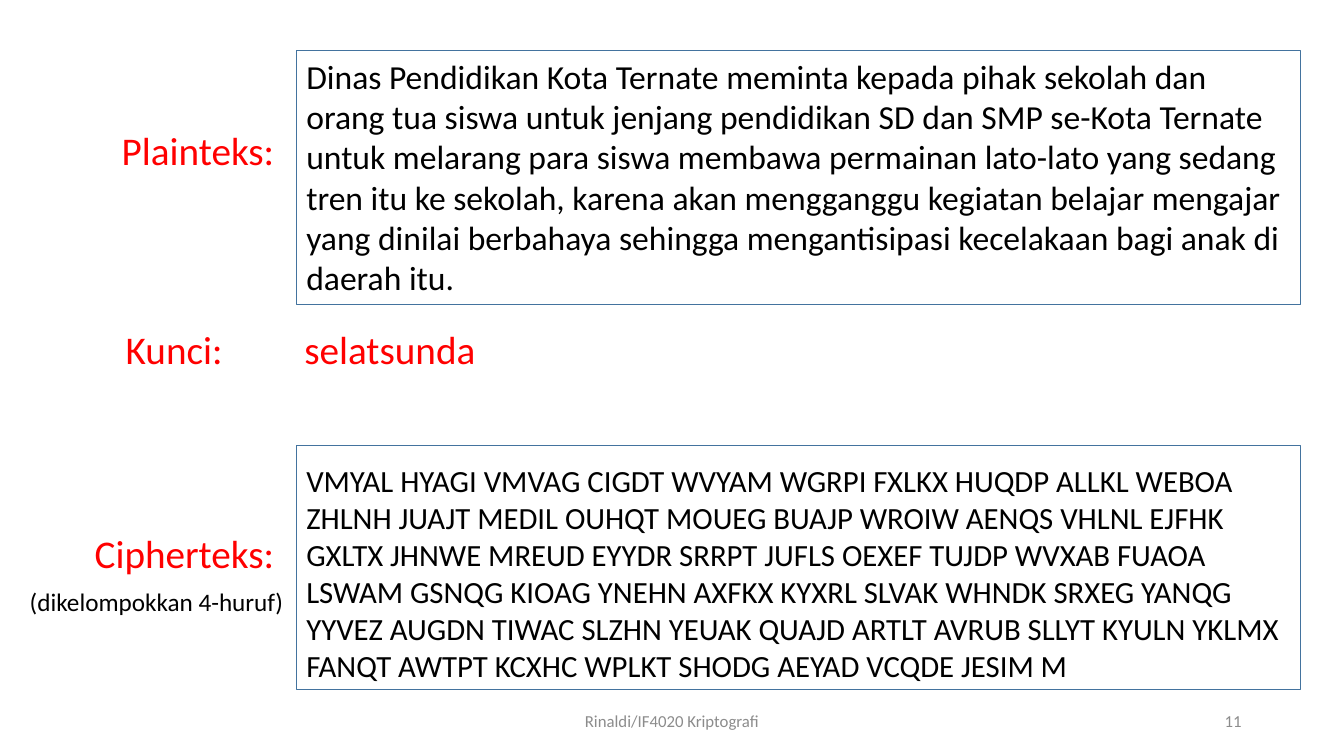
from pptx import Presentation
from pptx.dml.color import RGBColor
from pptx.enum.shapes import MSO_SHAPE
from pptx.enum.text import MSO_ANCHOR, PP_ALIGN
from pptx.util import Cm, Pt

RECTANGLE = MSO_SHAPE.RECTANGLE
TOP, MIDDLE = MSO_ANCHOR.TOP, MSO_ANCHOR.MIDDLE
LEFT, CENTER, RIGHT = PP_ALIGN.LEFT, PP_ALIGN.CENTER, PP_ALIGN.RIGHT

BLACK = RGBColor(0x00, 0x00, 0x00)
RED = RGBColor(0xFF, 0x00, 0x00)
GRAY = RGBColor(0x8C, 0x8C, 0x8C)
BLUE = RGBColor(0x43, 0x73, 0x9E)
FONT = "Calibri"

SLIDE_WIDTH, SLIDE_HEIGHT = Cm(33.87), Cm(19.05)
PANEL_LEFT, PANEL_WIDTH = Cm(7.47), Cm(25.3)
LABEL_RIGHT = Cm(7.16)
LABEL_WIDTH, LABEL_HEIGHT = Cm(6), Cm(1.45)

PLAINTEXT = (
    "Dinas Pendidikan Kota Ternate meminta kepada pihak sekolah dan orang tua siswa "
    "untuk jenjang pendidikan SD dan SMP se-Kota Ternate untuk melarang para siswa "
    "membawa permainan lato-lato yang sedang tren itu ke sekolah, karena akan "
    "mengganggu kegiatan belajar mengajar yang dinilai berbahaya sehingga "
    "mengantisipasi kecelakaan bagi anak di daerah itu."
)
CIPHERTEXT = (
    "VMYAL HYAGI VMVAG CIGDT WVYAM WGRPI FXLKX HUQDP ALLKL WEBOA "
    "ZHLNH JUAJT MEDIL OUHQT MOUEG BUAJP WROIW AENQS VHLNL EJFHK "
    "GXLTX JHNWE MREUD EYYDR SRRPT JUFLS OEXEF TUJDP WVXAB FUAOA "
    "LSWAM GSNQG KIOAG YNEHN AXFKX KYXRL SLVAK WHNDK SRXEG YANQG "
    "YYVEZ AUGDN TIWAC SLZHN YEUAK QUAJD ARTLT AVRUB SLLYT KYULN YKLMX "
    "FANQT AWTPT KCXHC WPLKT SHODG AEYAD VCQDE JESIM M"
)


def write(frame, text, size, color, align=LEFT, anchor=TOP):
    frame.word_wrap = True
    frame.vertical_anchor = anchor
    paragraph = frame.paragraphs[0]
    paragraph.text = text
    paragraph.alignment = align
    paragraph.font.name = FONT
    paragraph.font.size = Pt(size)
    paragraph.font.color.rgb = color


def add_text(slide, left, top, width, height, *style):
    box = slide.shapes.add_textbox(left, top, width, height)
    write(box.text_frame, *style)


def add_panel(slide, top, height, label, label_offset, text, size, inset):
    panel = slide.shapes.add_shape(RECTANGLE, PANEL_LEFT, top, PANEL_WIDTH, height)
    panel.shadow.inherit = False
    panel.fill.background()
    panel.line.color.rgb = BLUE
    panel.line.width = Pt(1)
    panel.text_frame.margin_top = inset
    write(panel.text_frame, text, size, BLACK)
    add_text(slide, LABEL_RIGHT - LABEL_WIDTH, top + label_offset,
             LABEL_WIDTH, LABEL_HEIGHT, label, 28, RED, RIGHT)


def add_key(slide, left, top):
    add_text(slide, left, top, Cm(3.5), LABEL_HEIGHT, "Kunci:", 28, RED)
    add_text(slide, left + Cm(4.5), top, Cm(5.5), LABEL_HEIGHT, "selatsunda", 28, RED)


def add_footer(slide, top, height):
    width = Cm(11.43)
    add_text(slide, (SLIDE_WIDTH - width) // 2, top, width, height,
             "Rinaldi/IF4020 Kriptografi", 12, GRAY, CENTER, MIDDLE)
    add_text(slide, Cm(23.92), top, Cm(7.62), height, "11", 12, GRAY, RIGHT, MIDDLE)


def main():
    deck = Presentation()
    deck.slide_width, deck.slide_height = SLIDE_WIDTH, SLIDE_HEIGHT
    slide = deck.slides.add_slide(deck.slide_layouts[6])
    add_panel(slide, Cm(1.27), Cm(6.4), "Plainteks:", Cm(1.8), PLAINTEXT, 24, Cm(0.13))
    add_key(slide, Cm(2.92), Cm(8.08))
    add_panel(slide, Cm(11.23), Cm(6.15), "Cipherteks:", Cm(1.98), CIPHERTEXT, 22, Cm(0.41))
    add_text(slide, Cm(0.5), Cm(14.66), Cm(7.1), Cm(1.02),
             "(dikelompokkan 4-huruf)", 18, BLACK)
    add_footer(slide, Cm(17.65), Cm(1.02))
    deck.save("out.pptx")


if __name__ == "__main__":
    main()
